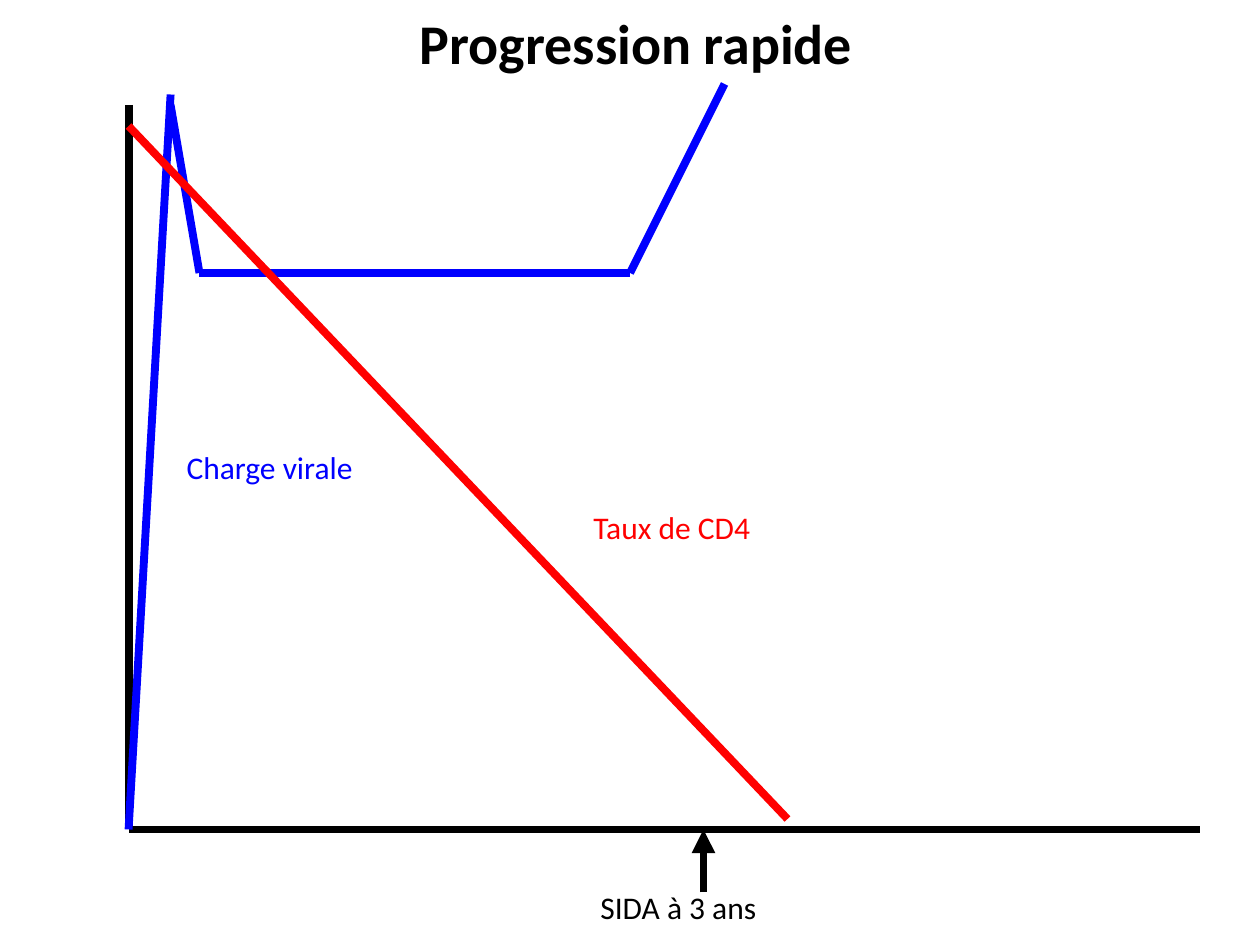
from dataclasses import dataclass
from itertools import pairwise

from lxml.etree import SubElement
from pptx import Presentation
from pptx.dml.color import RGBColor
from pptx.enum.shapes import MSO_CONNECTOR
from pptx.enum.text import MSO_AUTO_SIZE, PP_ALIGN
from pptx.oxml.ns import qn
from pptx.util import Pt


@dataclass(frozen=True)
class Theme:
    axis: RGBColor = RGBColor(0, 0, 0)
    viral_load: RGBColor = RGBColor(0, 0, 255)
    cd4: RGBColor = RGBColor(255, 0, 0)
    font: str = "Calibri"
    title_size: int = 32
    label_size: int = 18
    stroke: float = 4.5


THEME = Theme()

# Axes cross at the origin
ORIGIN_X, ORIGIN_Y = 73.5, 474
AIDS_X = 402


def add_line(slide, start, end, color, arrow=False):
    line = slide.shapes.add_connector(
        MSO_CONNECTOR.STRAIGHT, *(Pt(value) for value in (*start, *end)))
    line.line.color.rgb = color
    line.line.width = Pt(THEME.stroke)
    if arrow:
        SubElement(line.line._get_or_add_ln(), qn("a:tailEnd"), type="triangle")
    SubElement(line._element.spPr, qn("a:effectLst"))


def add_curve(slide, points, color):
    for start, end in pairwise(points):
        add_line(slide, start, end, color)


def add_text(slide, text, box, color, size=THEME.label_size, bold=False,
             wrap=False, align=PP_ALIGN.LEFT):
    frame = slide.shapes.add_textbox(*(Pt(value) for value in box)).text_frame
    frame.word_wrap = wrap
    frame.auto_size = MSO_AUTO_SIZE.SHAPE_TO_FIT_TEXT
    paragraph = frame.paragraphs[0]
    paragraph.alignment = align
    run = paragraph.add_run()
    run.text = text
    font_format = {"name": THEME.font, "size": Pt(size), "bold": bold}
    for attribute, value in font_format.items():
        setattr(run.font, attribute, value)
    run.font.color.rgb = color


def main():
    deck = Presentation()
    deck.slide_width, deck.slide_height = Pt(720), Pt(540)
    slide = deck.slides.add_slide(deck.slide_layouts[6])

    # Axes
    origin = (ORIGIN_X, ORIGIN_Y)
    add_curve(slide, [(ORIGIN_X, 60), origin, (685.5, ORIGIN_Y)], THEME.axis)

    # Viral load: early peak, plateau, final rise
    add_line(slide, origin, (97.5, 54), THEME.viral_load)
    add_curve(slide, [(97.5, 60), (114, 156), (360, 156), (414, 48)],
              THEME.viral_load)
    add_text(slide, "Charge virale", (99.5, 252.5, 112, 29), THEME.viral_load)

    # Falling CD4 count
    add_line(slide, (ORIGIN_X, 72), (450, 468), THEME.cd4)
    add_text(slide, "Taux de CD4", (332, 287, 106.5, 29), THEME.cd4)

    # Onset of AIDS on the time axis
    add_line(slide, (AIDS_X, 510), (AIDS_X, ORIGIN_Y), THEME.axis, arrow=True)
    add_text(slide, "SIDA à 3 ans", (336, 504, 104.5, 29), THEME.axis)

    # Title
    add_text(slide, "Progression rapide", (0, 1.5, 727, 45.5), THEME.axis,
             size=THEME.title_size, bold=True, wrap=True, align=PP_ALIGN.CENTER)

    deck.save("out.pptx")


if __name__ == "__main__":
    main()
